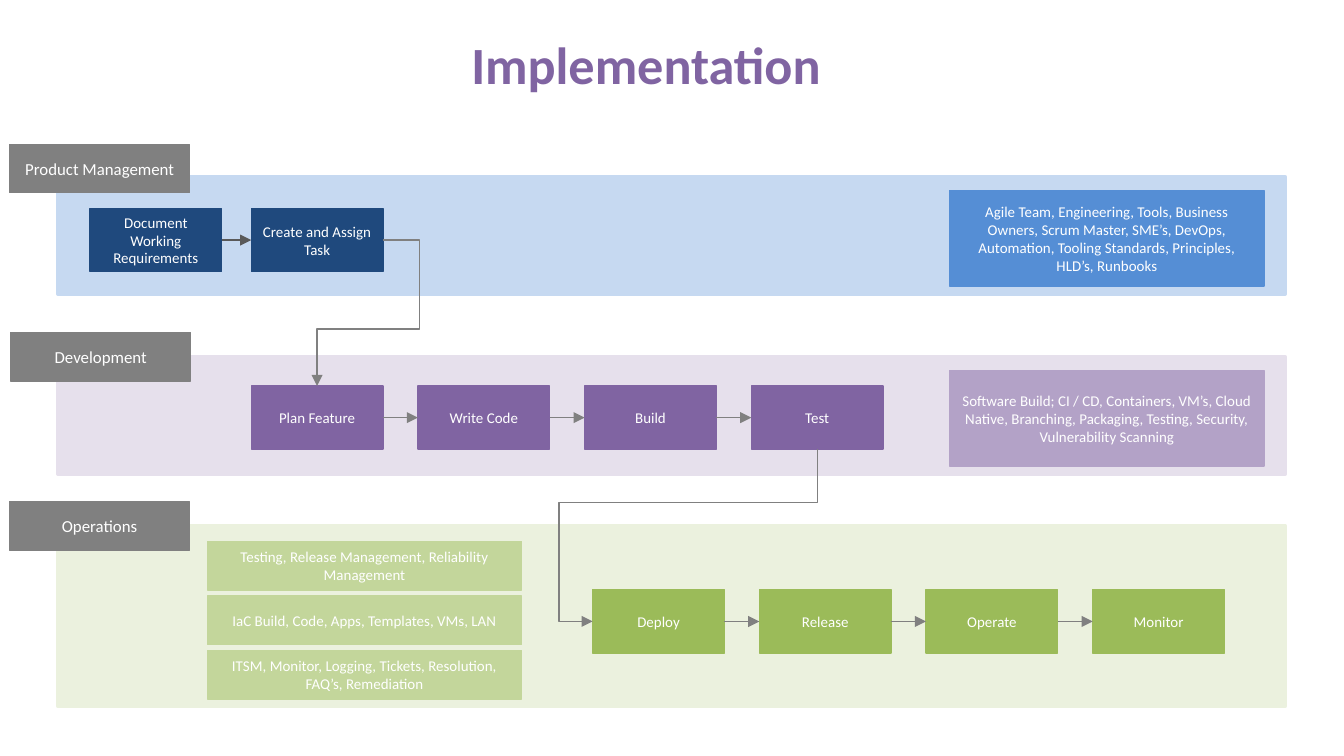
"""Build the Implementation swimlane slide."""
from dataclasses import dataclass
from itertools import pairwise

from lxml import etree
from pptx import Presentation
from pptx.dml.color import RGBColor
from pptx.enum.shapes import MSO_CONNECTOR, MSO_SHAPE
from pptx.enum.text import MSO_ANCHOR, MSO_AUTO_SIZE, PP_ALIGN
from pptx.oxml.ns import qn
from pptx.util import Pt

RECT = MSO_SHAPE.RECTANGLE
STRAIGHT, ELBOW = MSO_CONNECTOR.STRAIGHT, MSO_CONNECTOR.ELBOW
MIDDLE, CENTER = MSO_ANCHOR.MIDDLE, PP_ALIGN.CENTER
FIT = MSO_AUTO_SIZE.SHAPE_TO_FIT_TEXT

WHITE = RGBColor(0xFF, 0xFF, 0xFF)
GRAY = RGBColor(0x80, 0x80, 0x80)
DARK_GRAY = RGBColor(0x59, 0x59, 0x59)
NAVY = RGBColor(0x1F, 0x49, 0x7D)
BLUE = RGBColor(0x55, 0x8E, 0xD5)
PALE_BLUE = RGBColor(0xC6, 0xD9, 0xF1)
PURPLE = RGBColor(0x80, 0x64, 0xA2)
LILAC = RGBColor(0xB3, 0xA2, 0xC7)
PALE_PURPLE = RGBColor(0xE6, 0xE0, 0xEC)
GREEN = RGBColor(0x9B, 0xBB, 0x59)
LIGHT_GREEN = RGBColor(0xC3, 0xD6, 0x9B)
PALE_GREEN = RGBColor(0xEB, 0xF1, 0xDE)

STEP_W, STEP_H, PITCH = 70.6, 33.9, 89.3
NOTE_W, NOTE_H = 168.5, 51.1
TAG_W, TAG_H = 96.5, 26


@dataclass(frozen=True)
class Lane:
    tag: str
    tag_x: float
    tag_y: float
    top: float
    height: float
    band_color: RGBColor
    step_color: RGBColor
    step_y: float
    step_xs: tuple[float, ...]
    steps: tuple[str, ...]
    arrow_color: RGBColor


@dataclass(frozen=True)
class Note:
    text: str
    x: float
    y: float
    h: float
    color: RGBColor


def row(x: float, n: int) -> tuple[float, ...]:
    return tuple(x + i * PITCH for i in range(n))


LANES = (
    Lane("Product Management", 5.1, 77.3, 94.7, 62.8, PALE_BLUE, NAVY, 111.7,
         (48.2, 134.6), ("Document Working Requirements", "Create and Assign Task"), DARK_GRAY),
    Lane("Development", 5.7, 178.1, 191.2, 62.8, PALE_PURPLE, PURPLE, 206.8,
         row(134.6, 4), ("Plan Feature", "Write Code", "Build", "Test"), GRAY),
    Lane("Operations", 5.1, 268.8, 281.6, 96.8, PALE_GREEN, GREEN, 316,
         row(317.5, 4), ("Deploy", "Release", "Operate", "Monitor"), GRAY),
)

OPS_NOTES = (
    "Testing, Release Management, Reliability Management",
    "IaC Build, Code, Apps, Templates, VMs, LAN",
    "ITSM, Monitor, Logging, Tickets, Resolution, FAQ’s, Remediation",
)
NOTES = (
    Note("Agile Team, Engineering, Tools, Business Owners, Scrum Master, SME’s, DevOps, "
         "Automation, Tooling Standards, Principles, HLD’s, Runbooks",
         508.8, 102.2, NOTE_H, BLUE),
    Note("Software Build; CI / CD, Containers, VM’s, Cloud Native, Branching, Packaging, "
         "Testing, Security, Vulnerability Scanning", 508.8, 198.6, NOTE_H, LILAC),
    *(Note(text, 111.1, 290.1 + i * 29.2, TAG_H, LIGHT_GREEN)
      for i, text in enumerate(OPS_NOTES)),
)


def write(tf, text: str, *, size: float = 8, color: RGBColor = WHITE, bold: bool = False) -> None:
    p = tf.paragraphs[0]
    p.alignment = CENTER
    r = p.add_run()
    r.text = text
    r.font.name, r.font.size, r.font.bold = "Calibri", Pt(size), bold
    r.font.color.rgb = color


def add_box(s, x: float, y: float, w: float, h: float, color: RGBColor,
            text: str = "", size: float = 8, line: float = 0.75):
    sp = s.shapes.add_shape(RECT, Pt(x), Pt(y), Pt(w), Pt(h))
    sp.shadow.inherit = False
    sp.fill.solid()
    sp.fill.fore_color.rgb = color
    sp.line.color.rgb = color
    sp.line.width = Pt(line)
    if text:
        tf = sp.text_frame
        tf.word_wrap = True
        tf.vertical_anchor = MIDDLE
        tf.margin_left = tf.margin_right = Pt(5)
        tf.margin_top = tf.margin_bottom = Pt(2.5)
        write(tf, text, size=size)
    return sp


def style_arrow(c, color: RGBColor) -> None:
    c.line.color.rgb = color
    c.line.width = Pt(0.75)
    etree.SubElement(c.line._get_or_add_ln(), qn("a:tailEnd"), type="triangle")
    etree.SubElement(c._element.spPr, qn("a:effectLst"))


def add_arrow(s, a, b, color: RGBColor) -> None:
    c = s.shapes.add_connector(STRAIGHT, 0, 0, 0, 0)
    c.begin_connect(a, 3)
    c.end_connect(b, 1)
    style_arrow(c, color)


def add_elbow(s, x1: int, y1: int, x2: int, y2: int,
              bends: tuple[int, int], turned: bool = False) -> None:
    """Draw a four-segment elbow; a turned one leaves its start downwards."""
    if turned:
        cx, cy = (x1 + x2) // 2, (y1 + y2) // 2
        half_w, half_h = abs(y2 - y1) // 2, abs(x2 - x1) // 2
        x1, y1, x2, y2 = cx - half_w, cy - half_h, cx + half_w, cy + half_h
    c = s.shapes.add_connector(ELBOW, x1, y1, x2, y2)
    spPr = c._element.spPr
    if turned:
        spPr.find(qn("a:xfrm")).set("rot", "5400000")
    geom = spPr.find(qn("a:prstGeom"))
    geom.set("prst", "bentConnector4")
    guides = geom.find(qn("a:avLst"))
    for i, bend in enumerate(bends, 1):
        etree.SubElement(guides, qn("a:gd"), name=f"adj{i}", fmla=f"val {bend}")
    style_arrow(c, GRAY)


def main() -> None:
    prs = Presentation()
    prs.slide_width, prs.slide_height = Pt(720), Pt(405)
    s = prs.slides.add_slide(prs.slide_layouts[6])

    title = s.shapes.add_textbox(Pt(244), Pt(13.7), Pt(204), Pt(41))
    title.text_frame.word_wrap = False
    title.text_frame.auto_size = FIT
    write(title.text_frame, "Implementation", size=28, color=PURPLE, bold=True)

    for lane in LANES:
        add_box(s, 31, lane.top, 657.5, lane.height, lane.band_color, line=2)

    steps = {}
    for lane in LANES:
        boxes = [add_box(s, x, lane.step_y, STEP_W, STEP_H, lane.step_color, text)
                 for x, text in zip(lane.step_xs, lane.steps)]
        steps.update(zip(lane.steps, boxes))
        for a, b in pairwise(boxes):
            add_arrow(s, a, b, lane.arrow_color)

    task, plan = steps["Create and Assign Task"], steps["Plan Feature"]
    add_elbow(s, task.left + task.width, task.top + task.height // 2,
              plan.left + plan.width // 2, plan.top, (-55200, 60900))
    test, deploy = steps["Test"], steps["Deploy"]
    add_elbow(s, test.left + test.width // 2, test.top + test.height,
              deploy.left, deploy.top + deploy.height // 2, (31100, 115000), turned=True)

    for note in NOTES:
        add_box(s, note.x, note.y, NOTE_W, note.h, note.color, note.text)
    for lane in LANES:
        add_box(s, lane.tag_x, lane.tag_y, TAG_W, TAG_H, GRAY, lane.tag, size=9)

    prs.save("out.pptx")


if __name__ == "__main__":
    main()
